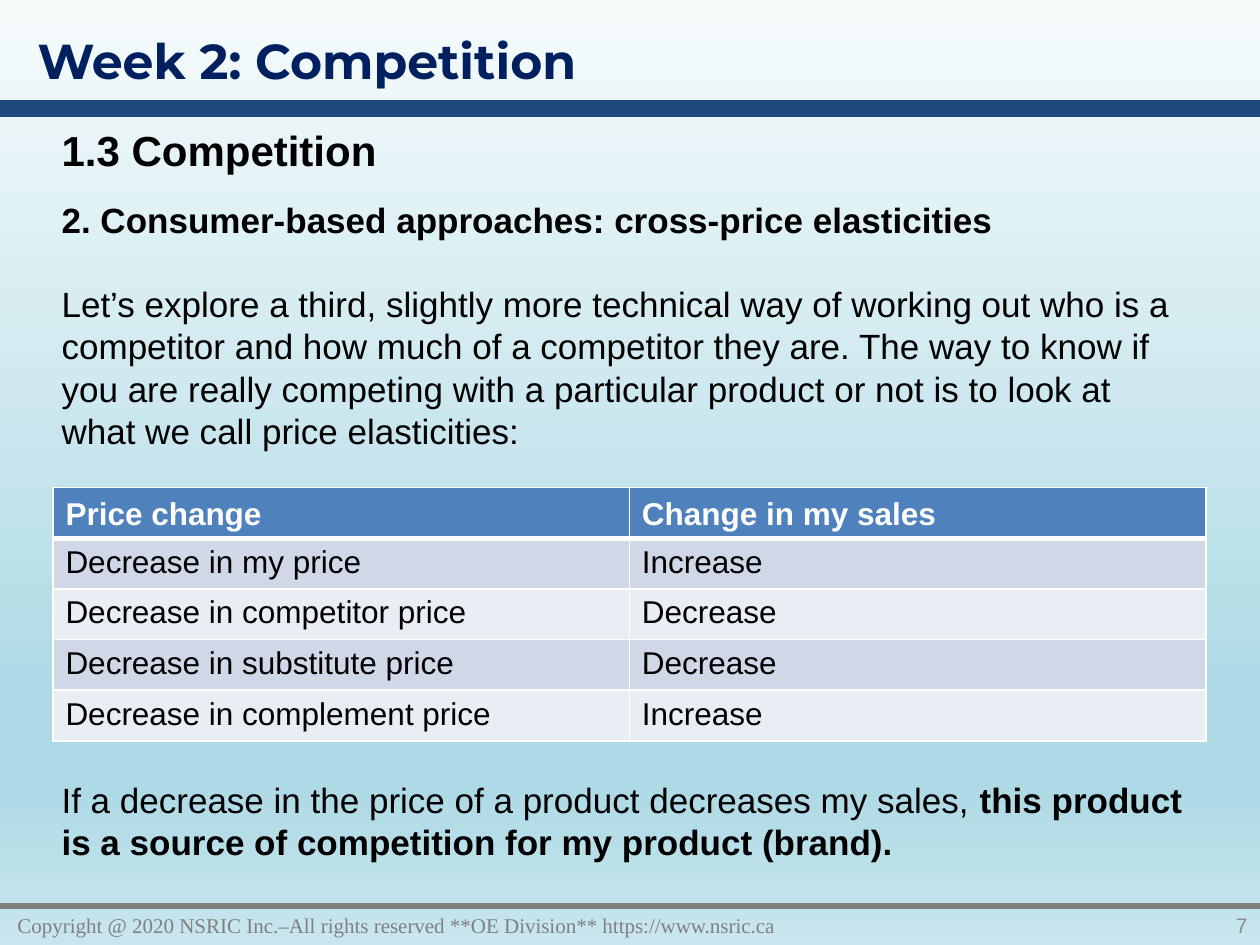
from copy import deepcopy
from lxml import etree
from pptx import Presentation, util as u
from pptx.dml.color import RGBColor
from pptx.enum import shapes, text
from pptx.oxml.ns import qn

NAVY, BLUE, GRAY, WHITE, BLACK = "002060", "1F497D", "808080", "FFFFFF", "000000"
BANDS = ["E9EDF4", "D0D8E8"]
LEFT, WIDE = 0.39, 9.15


def color(code):
    return RGBColor.from_string(code)


def write(frame, *paras, size=20, font="Arial", ink=BLACK, align=None,
          anchor=text.MSO_ANCHOR.TOP, gap=0):
    """Fill a frame; each paragraph is a list of (words, bold) pairs."""
    frame.word_wrap = True
    frame.vertical_anchor = anchor
    for i, runs in enumerate(paras):
        para = frame.paragraphs[0] if i == 0 else frame.add_paragraph()
        para.alignment = align
        if i:
            para.space_before = u.Pt(gap)
        for words, bold in runs:
            run = para.add_run()
            run.text = words
            run.font.size, run.font.name, run.font.bold = u.Pt(size), font, bold
            run.font.color.rgb = color(ink)


deck = Presentation()
deck.slide_width, deck.slide_height = u.Inches(10), u.Inches(7.5)
slide = deck.slides.add_slide(deck.slide_layouts[6])

# Background gradient, top to bottom
fill = slide.background.fill
fill.gradient()
fill.gradient_angle = 270
grad = slide.background._cSld.find(".//" + qn("a:gradFill"))
stops = grad.find(qn("a:gsLst"))
for _ in range(2):
    stops.append(deepcopy(stops[0]))
shades = [(0, "F6FBFC"), (0.74, "AEDAE5"), (0.83, "AEDAE5"), (1, "C9E6EE")]
for stop, (place, code) in zip(fill.gradient_stops, shades):
    stop.position = place
    stop.color.rgb = color(code)

# Header and footer rules
for y, code, weight in [(0.86, BLUE, 10), (7.19, GRAY, 3)]:
    rule = slide.shapes.add_connector(
        shapes.MSO_CONNECTOR.STRAIGHT, 0, u.Inches(y), deck.slide_width, u.Inches(y))
    rule.line.color.rgb = color(code)
    rule.line.width = u.Pt(weight)
    etree.SubElement(rule._element.spPr, qn("a:effectLst"))

# Text boxes: place, paragraphs, format
middle = text.MSO_ANCHOR.MIDDLE
boxes = [
    ((0.04, 7.19, 8.27, 0.31),
     [[("Copyright @ 2020 NSRIC Inc.–All rights reserved **OE Division** "
        "https://www.nsric.ca", False)]],
     dict(size=12, font="Times New Roman", ink=GRAY, anchor=middle)),
    ((8.59, 7.19, 1.41, 0.31), [[("7", False)]],
     dict(size=12, ink="8C8C8C", align=text.PP_ALIGN.RIGHT, anchor=middle)),
    ((0.2, 0.19, 8.76, 0.57), [[("Week 2: Competition", True)]],
     dict(size=28, font="Montserrat", ink=NAVY)),
    ((LEFT, 0.94, WIDE, 0.5), [[("1.3 Competition", True)]], dict(size=24)),
    ((LEFT, 1.53, WIDE, 2.73),
     [[("2. Consumer-based approaches: cross-price elasticities", True)],
      [("Let’s explore a third, slightly more technical way of working out who is a "
        "competitor and how much of a competitor they are. The way to know if you are "
        "really competing with a particular product or not is to look at what we call "
        "price elasticities:", False)]],
     dict(gap=24)),
    ((LEFT, 6.13, WIDE, 0.77),
     [[("If a decrease in the price of a product decreases my sales,", False),
       (" this product is a source of competition for my product (brand).", True)]],
     {}),
]
for place, paras, form in boxes:
    box = slide.shapes.add_textbox(*map(u.Inches, place))
    write(box.text_frame, *paras, **form)

# Price table
rows = [
    ("Price change", "Change in my sales"),
    ("Decrease in my price", "Increase"),
    ("Decrease in competitor price", "Decrease"),
    ("Decrease in substitute price", "Decrease"),
    ("Decrease in complement price", "Increase"),
]
table = slide.shapes.add_table(
    len(rows), 2, u.Inches(0.42), u.Inches(3.87), u.Inches(WIDE), u.Inches(2.01)).table
for r, row in enumerate(rows):
    head = r == 0
    for c, words in enumerate(row):
        cell = table.cell(r, c)
        write(cell.text_frame, [(words, head)], size=18, ink=WHITE if head else BLACK)
        cell.vertical_anchor = text.MSO_ANCHOR.BOTTOM if head else text.MSO_ANCHOR.TOP
        props = cell._tc.get_or_add_tcPr()
        for side in "LRTB":
            thick = (head and side == "B") or (r == 1 and side == "T")
            edge = etree.SubElement(props, qn("a:ln" + side), w=str(u.Pt(3 if thick else 1)))
            paint = etree.SubElement(edge, qn("a:solidFill"))
            etree.SubElement(paint, qn("a:srgbClr"), val=WHITE)
        cell.fill.solid()
        cell.fill.fore_color.rgb = color("4F81BD" if head else BANDS[r % 2])

deck.save("out.pptx")
